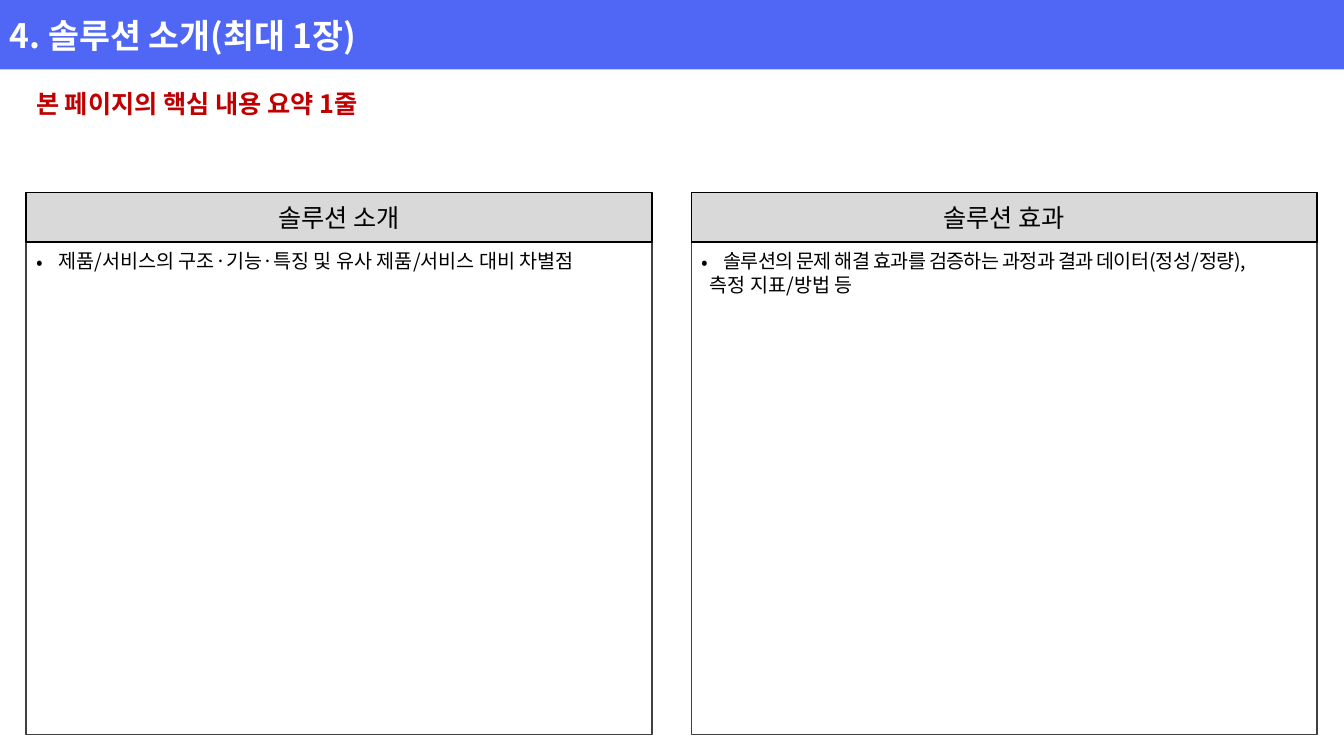
from lxml.etree import SubElement
from pptx import Presentation
from pptx.dml.color import RGBColor
from pptx.enum.shapes import MSO_SHAPE
from pptx.enum.text import MSO_ANCHOR, PP_ALIGN
from pptx.oxml.ns import qn
from pptx.util import Cm, Pt

LEFT, TOP, PANEL_W, PANEL_H, HEAD_H = 0.66, 4.85, 15.77, 13.66, 1.25
PITCH = 16.76
PAGE_W, PAGE_H, BANNER_H = 33.87, 19.05, 1.75


def rgb(value):
    return RGBColor.from_string(value)


class SlideBuilder:
    font = "Noto Sans CJK KR"

    def __init__(self, slide):
        self.slide = slide

    def box(self, x, y, w, h, fill=None, line=None):
        s = self.slide.shapes.add_shape(
            MSO_SHAPE.RECTANGLE, Cm(x), Cm(y), Cm(w), Cm(h))
        s.shadow.inherit = False
        if fill:
            s.fill.solid()
            s.fill.fore_color.rgb = rgb(fill)
        else:
            s.fill.background()
        if line:
            s.line.color.rgb = rgb(line)
            s.line.width = Pt(1)
        else:
            s.line.fill.background()
        s.text_frame.vertical_anchor = MSO_ANCHOR.MIDDLE
        return s

    def text_box(self, x, y, w, h, anchor=MSO_ANCHOR.TOP):
        s = self.slide.shapes.add_textbox(Cm(x), Cm(y), Cm(w), Cm(h))
        s.text_frame.word_wrap = True
        s.text_frame.vertical_anchor = anchor
        return s

    def set_text(self, p, text, size, color="000000", bold=False,
                 align=PP_ALIGN.LEFT, spacing=0):
        """Fill a paragraph; spacing is between letters, in points."""
        p.text = text
        p.alignment = align
        for r in p.runs:
            r.font.size = Pt(size)
            r.font.bold = bold
            r.font.color.rgb = rgb(color)
            r.font.name = self.font
            rPr = r._r.get_or_add_rPr()
            SubElement(rPr, qn("a:ea"), typeface=self.font)
            if spacing:
                rPr.set("spc", str(int(spacing * 100)))

    def indent(self, p, margin, bullet=False):
        pPr = p._p.get_or_add_pPr()
        pPr.set("marL", str(int(Cm(margin))))
        pPr.set("indent", str(-int(Cm(margin)) if bullet else 0))
        if bullet:
            SubElement(pPr, qn("a:buFont"), typeface=self.font)
            SubElement(pPr, qn("a:buChar"), char="•")

    def panel(self, x, heading, lines, body_h, spacing=0):
        """Framed column: the first line is bulleted, the rest continue it."""
        self.box(x, TOP, PANEL_W, PANEL_H, line="404040")
        tf = self.text_box(x, TOP + 1.3, PANEL_W, body_h).text_frame
        for i, line in enumerate(lines):
            first = i == 0
            p = tf.paragraphs[0] if first else tf.add_paragraph()
            self.set_text(p, line, 14, align=PP_ALIGN.JUSTIFY,
                          spacing=spacing if first else 0)
            self.indent(p, 0.56 if first else 0.22, bullet=first)
        head = self.box(x, TOP, PANEL_W, HEAD_H, fill="D9D9D9", line="000000")
        self.set_text(head.text_frame.paragraphs[0], heading, 18,
                      align=PP_ALIGN.CENTER)


def main():
    prs = Presentation()
    prs.slide_width, prs.slide_height = Cm(PAGE_W), Cm(PAGE_H)
    b = SlideBuilder(prs.slides.add_slide(prs.slide_layouts[6]))

    banner = b.box(0, 0, PAGE_W, BANNER_H, fill="5067F5")
    b.set_text(banner.text_frame.paragraphs[0], "4. 솔루션 소개(최대 1장)", 24,
               "FFFFFF", bold=True)

    summary = b.text_box(LEFT, BANNER_H, PITCH + PANEL_W, 1.35,
                         MSO_ANCHOR.MIDDLE)
    p = summary.text_frame.paragraphs[0]
    b.set_text(p, "본 페이지의 핵심 내용 요약 1줄", 18, "C00000", bold=True)
    p.line_spacing = 1.5

    panels = [
        ("솔루션 소개",
         ["제품/서비스의 구조·기능·특징 및 유사 제품/서비스 대비 차별점"],
         0.86, 0),
        ("솔루션 효과",
         ["솔루션의 문제 해결 효과를 검증하는 과정과 결과 데이터(정성/정량),",
          "측정 지표/방법 등"],
         1.45, -0.5),
    ]
    for i, (heading, lines, body_h, spacing) in enumerate(panels):
        b.panel(LEFT + i * PITCH, heading, lines, body_h, spacing)

    prs.save("out.pptx")


if __name__ == "__main__":
    main()
